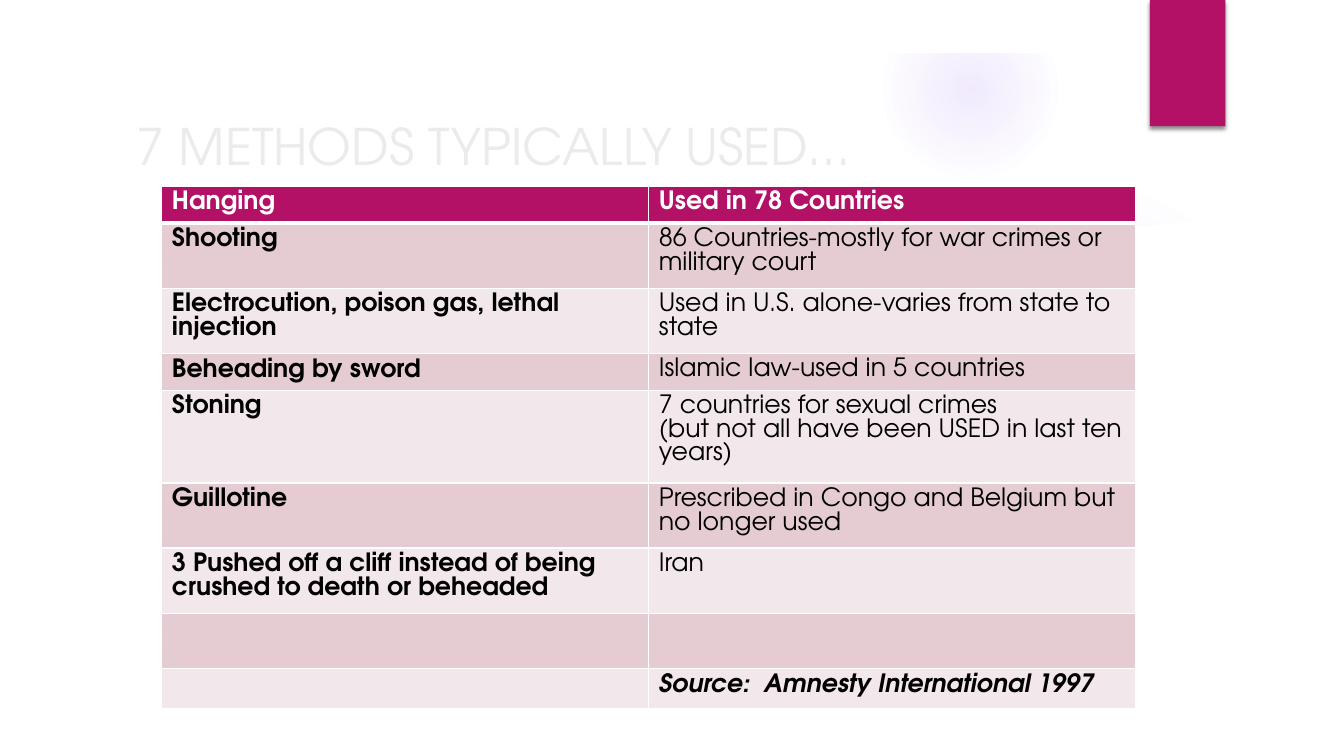
from dataclasses import dataclass
from pptx import Presentation
from pptx.dml.color import RGBColor
from pptx.enum.shapes import MSO_SHAPE as Preset
from pptx.enum.text import MSO_ANCHOR as Anchor
from pptx.oxml import parse_xml
from pptx.oxml.ns import nsdecls, qn
from pptx.util import Cm, Pt

FONT = "TeX Gyre Adventor"
ACCENT, WHITE, BLACK, VIOLET, PALE = "B31166", "FFFFFF", "000000", "9B6BF2", "EBEBEB"
BANDS = ("F2E7EA", "E5CCD3")
SLIDE_WIDTH, SLIDE_HEIGHT = 33.87, 19.05


@dataclass(frozen=True)
class Glow:
    left: float
    top: float
    size: float
    stops: tuple[tuple[int, int], ...]


@dataclass(frozen=True)
class Outline:
    points: tuple[tuple[float, float], ...]
    opacity: int


@dataclass(frozen=True)
class Method:
    name: str
    usage: str
    height: float
    italic: bool = False


GLOWS = (
    Glow(23.9, 4.65, 7.82, ((0, 7), (36, 6), (69, 0))),
    Glow(22.23, 0.03, 4.45, ((0, 14), (36, 7), (73, 0))),
)
OUTLINES = (
    Outline(((23.72, 6.35), (28.5, 6.1), (32.74, 5.44), (32.59, 4.22),
             (30.53, 4.85), (28.12, 5.43), (25.65, 5.92), (23.62, 6.17)), 20),
    Outline(((1.27, 5.18), (7.19, 5.84), (15.42, 6.27), (22.02, 6.22), (25.5, 6.02),
             (28.35, 5.77), (30.48, 5.51), (32.61, 5.18), (32.61, 17.78), (1.27, 17.78)), 100),
)
METHODS = (
    Method("Hanging", "Used in 78 Countries", 0.93),
    Method("Shooting", "86 Countries-mostly for war crimes or military court", 1.64),
    Method("Electrocution, poison gas, lethal injection",
           "Used in U.S. alone-varies from state to state", 1.64),
    Method("Beheading by sword", "Islamic law-used in 5 countries", 0.93),
    Method("Stoning",
           "7 countries for sexual crimes\n(but not all have been USED in last ten years)", 2.34),
    Method("Guillotine", "Prescribed in Congo and Belgium but no longer used", 1.64),
    Method("3 Pushed off a cliff instead of being crushed to death or beheaded", "Iran", 1.64),
    Method("", "", 1.4),
    Method("", "Source:  Amnesty International 1997", 0.93, italic=True),
)


def color(value: str) -> RGBColor:
    return RGBColor.from_string(value)


def paint(shape, value: str) -> None:
    shape.shadow.inherit = False
    shape.fill.solid()
    shape.fill.fore_color.rgb = color(value)
    shape.line.fill.background()


def add_preset(page, preset: Preset, left: float, top: float, width: float, height: float,
               value: str):
    shape = page.shapes.add_shape(preset, Cm(left), Cm(top), Cm(width), Cm(height))
    paint(shape, value)
    return shape


def add_glow(page, glow: Glow) -> None:
    shape = add_preset(page, Preset.OVAL, glow.left, glow.top, glow.size, glow.size, VIOLET)
    stops = "".join(
        f'<a:gs pos="{position * 1000}"><a:srgbClr val="{VIOLET}">'
        f'<a:alpha val="{opacity * 1000}"/></a:srgbClr></a:gs>'
        for position, opacity in glow.stops
    )
    gradient = parse_xml(
        f'<a:gradFill {nsdecls("a")}><a:gsLst>{stops}</a:gsLst><a:path path="circle">'
        '<a:fillToRect l="50000" t="50000" r="50000" b="50000"/></a:path></a:gradFill>'
    )
    properties = shape._element.spPr
    properties.replace(properties.find(qn("a:solidFill")), gradient)


def add_outline(page, outline: Outline) -> None:
    start, *others = [(Cm(x), Cm(y)) for x, y in outline.points]
    builder = page.shapes.build_freeform(*start)
    builder.add_line_segments(others, close=True)
    shape = builder.convert_to_shape()
    paint(shape, WHITE)
    tint = shape._element.spPr.find(qn("a:solidFill"))[0]
    tint.append(parse_xml(f'<a:alpha {nsdecls("a")} val="{outline.opacity * 1000}"/>'))


def add_tab(page) -> None:
    tab = add_preset(page, Preset.RECTANGLE, 28.98, 0, 1.9, 3.18, ACCENT)
    tab._element.spPr.find(qn("a:effectLst")).append(parse_xml(
        f'<a:outerShdw {nsdecls("a")} blurRad="{Pt(3)}" dist="{Pt(2)}" dir="5400000" '
        f'rotWithShape="0"><a:srgbClr val="{BLACK}"><a:alpha val="45000"/></a:srgbClr>'
        '</a:outerShdw>'
    ))


def style(para, size: int, value: str, bold: bool = False, italic: bool = False) -> None:
    for span in para.runs:
        span.font.name = FONT
        span.font.size = Pt(size)
        span.font.bold = bold
        span.font.italic = italic
        span.font.color.rgb = color(value)


def add_title(page) -> None:
    box = page.shapes.add_textbox(Cm(3.2), Cm(2.69), Cm(24.33), Cm(1.96))
    frame = box.text_frame
    frame.word_wrap = True
    frame.vertical_anchor = Anchor.MIDDLE
    frame.text = "7 METHODS TYPICALLY USED…"
    style(frame.paragraphs[0], 36, PALE)


def add_borders(cell, widths: dict[str, int]) -> None:
    properties = cell._tc.get_or_add_tcPr()
    for position, (side, width) in enumerate(widths.items()):
        properties.insert(position, parse_xml(
            f'<a:{side} {nsdecls("a")} w="{Pt(width)}"><a:solidFill>'
            f'<a:srgbClr val="{WHITE}"/></a:solidFill></a:{side}>'
        ))


def add_methods(page) -> None:
    total = sum(method.height for method in METHODS)
    table = page.shapes.add_table(
        len(METHODS), 2, Cm(4.08), Cm(4.69), Cm(24.54), Cm(total)
    ).table
    for row, method in enumerate(METHODS):
        table.rows[row].height = Cm(method.height)
        header = row == 0
        for column, text in enumerate((method.name, method.usage)):
            cell = table.cell(row, column)
            cell.fill.solid()
            cell.fill.fore_color.rgb = color(ACCENT if header else BANDS[row % 2])
            add_borders(cell, {"lnL": 1, "lnR": 1, "lnT": 3 if row == 1 else 1,
                               "lnB": 3 if header else 1})
            cell.text_frame.text = text
            bold = header or column == 0 or method.italic
            for para in cell.text_frame.paragraphs:
                para.line_spacing = Pt(16.8)
                style(para, 18, WHITE if header else BLACK, bold, method.italic)


def main() -> None:
    deck = Presentation()
    deck.slide_width, deck.slide_height = Cm(SLIDE_WIDTH), Cm(SLIDE_HEIGHT)
    page = deck.slides.add_slide(deck.slide_layouts[6])
    for glow in GLOWS:
        add_glow(page, glow)
    for outline in OUTLINES:
        add_outline(page, outline)
    border = add_preset(page, Preset.FRAME, 0, 0, SLIDE_WIDTH, SLIDE_HEIGHT, WHITE)
    border.adjustments[0] = 0.07
    add_tab(page)
    add_title(page)
    add_methods(page)
    deck.save("out.pptx")


if __name__ == "__main__":
    main()
